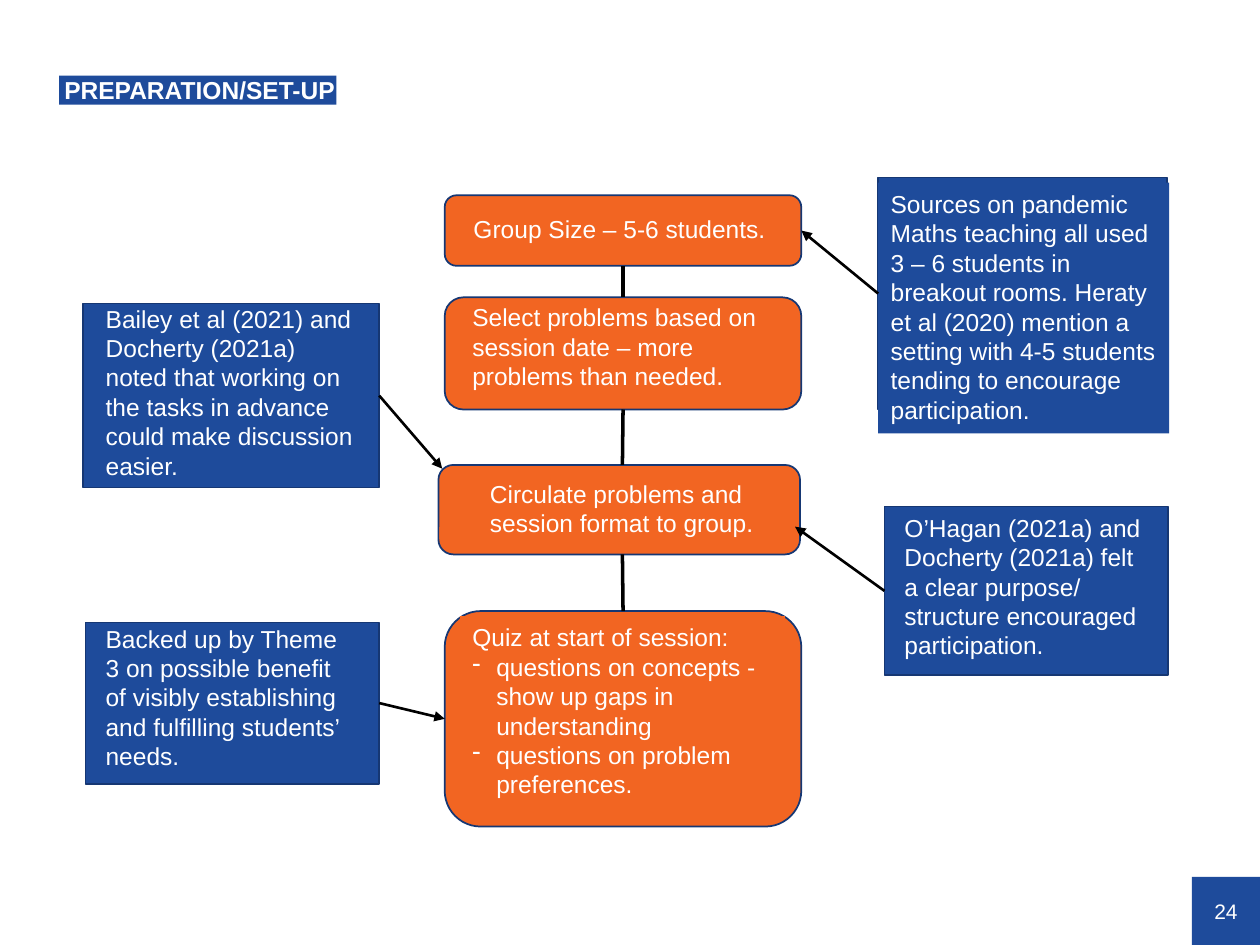
from lxml import etree
from pptx import Presentation, util as u
from pptx.dml.color import RGBColor
from pptx.enum import shapes, text
from pptx.oxml.ns import qn

FONT = "Arial"
BLUE, ORANGE, NAVY, WHITE, BLACK = "1E4B9B", "F26522", "163773", "FFFFFF", "000000"
RECT, ROUND = shapes.MSO_SHAPE.RECTANGLE, shapes.MSO_SHAPE.ROUNDED_RECTANGLE
TOP, LEFT, BOTTOM, RIGHT = range(4)
SPINE = 4.94  # x of the vertical line through the steps

# Content: frame, text frame, text fill, paragraphs; "- " starts a bullet
STEPS = [
    ((3.53, 1.55, 2.83, 0.56), (3.66, 1.65, 2.57, 0.34), None,
     ["Group Size – 5-6 students."]),
    ((3.53, 2.36, 2.83, 0.89), (3.65, 2.35, 2.58, 0.81), None,
     ["Select problems based on session date – more problems than needed."]),
    ((3.48, 3.69, 2.87, 0.71), (3.79, 3.75, 2.36, 0.57), None,
     ["Circulate problems and session format to group."]),
    ((3.53, 4.85, 2.83, 1.71), (3.65, 4.89, 2.58, 1.51), ORANGE,
     ["Quiz at start of session:",
      "- questions on concepts - show up gaps in understanding",
      "- questions on problem preferences."]),
]
NOTES = [
    ((6.97, 1.41, 2.29, 1.84), (6.97, 1.45, 2.31, 1.99), BLUE,
     ["Sources on pandemic Maths teaching all used 3 – 6 students in breakout rooms. "
      "Heraty et al (2020) mention a setting with 4-5 students tending to encourage "
      "participation."]),
    ((0.66, 2.41, 2.35, 1.46), (0.74, 2.36, 2.22, 1.51), None,
     ["Bailey et al (2021) and Docherty (2021a) noted that working on the tasks in "
      "advance could make discussion easier."]),
    ((7.02, 4.02, 2.25, 1.34), (7.08, 4.02, 2.1, 1.28), None,
     ["O’Hagan (2021a) and Docherty (2021a) felt a clear purpose/",
      "structure encouraged participation."]),
    ((0.68, 4.94, 2.33, 1.28), (0.74, 4.9, 2.17, 1.28), None,
     ["Backed up by Theme 3 on possible benefit of visibly establishing and "
      "fulfilling students’ needs."]),
]


def inches(values):
    return [u.Inches(value) for value in values]


def paint(fill, color):
    fill.solid()
    fill.fore_color.rgb = RGBColor.from_string(color)


def style(para, size=14, bold=False):
    para.font.name, para.font.size, para.font.bold = FONT, u.Pt(size), bold
    para.font.color.rgb = RGBColor.from_string(WHITE)


def add_box(kind, frame, fill, outline=None):
    box = slide.shapes.add_shape(kind, *inches(frame))
    box.shadow.inherit = False
    paint(box.fill, fill)
    if outline:
        paint(box.line.fill, outline)
        box.line.width = u.Pt(1)
    else:
        box.line.fill.background()
    return box


def add_text(frame, fill, lines):
    box = slide.shapes.add_textbox(*inches(frame))
    if fill:
        paint(box.fill, fill)
    box.text_frame.word_wrap = True
    for index, line in enumerate(lines):
        para = box.text_frame.paragraphs[0] if index == 0 else box.text_frame.add_paragraph()
        para.text = line.removeprefix("- ")
        if line.startswith("- "):
            props = para._p.get_or_add_pPr()
            props.set("marL", str(u.Inches(0.19)))
            props.set("indent", str(-u.Inches(0.19)))
            etree.SubElement(props, qn("a:buChar")).set("char", "-")
        style(para)


def add_card(kind, color, card):
    frame, text_frame, fill, lines = card
    box = add_box(kind, frame, color, NAVY)
    add_text(text_frame, fill, lines)
    return box


def add_link(start, end, arrow=False):
    """Each end is a point (x, y) or a pair (shape, side)."""
    points = [(0, 0) if hasattr(spot[0], "shape_id") else spot for spot in (start, end)]
    link = slide.shapes.add_connector(
        shapes.MSO_CONNECTOR.STRAIGHT, *inches(points[0] + points[1]))
    for spot, connect in ((start, link.begin_connect), (end, link.end_connect)):
        if hasattr(spot[0], "shape_id"):
            connect(*spot)
    paint(link.line.fill, BLACK)
    link.line.width = u.Pt(1.5 if arrow else 2)
    if arrow:
        etree.SubElement(link.line._get_or_add_ln(), qn("a:tailEnd")).set("type", "triangle")
    etree.SubElement(link._element.spPr, qn("a:effectLst"))


deck = Presentation()
deck.slide_width, deck.slide_height = inches((10, 7.5))
slide = deck.slides.add_slide(deck.slide_layouts[5])

# Title
title = slide.shapes.title
title.left, title.top, title.width, title.height = inches((0.47, 0.6, 2.2, 0.23))
paint(title.fill, BLUE)
frame = title.text_frame
frame.text = "PREPARATION/SET-UP"
frame.margin_left, frame.margin_top, frame.margin_right, frame.margin_bottom = inches(
    (0.04, 0.02, 0, 0))
frame.vertical_anchor = text.MSO_ANCHOR.MIDDLE
frame.auto_size = text.MSO_AUTO_SIZE.NONE
heading = frame.paragraphs[0]
heading.alignment, heading.line_spacing = text.PP_ALIGN.LEFT, 0.9
style(heading, bold=True)

# Page number
number = add_box(RECT, (9.46, 6.96, 0.54, 0.54), BLUE)
number.text_frame.text = "24"
number.text_frame.margin_left = number.text_frame.margin_right = 0
number.text_frame.paragraphs[0].alignment = text.PP_ALIGN.CENTER
style(number.text_frame.paragraphs[0], 12)

# Steps and the notes beside them
group, select, circulate, quiz = [add_card(ROUND, ORANGE, step) for step in STEPS]
sources, advance, purpose, needs = [add_card(RECT, BLUE, note) for note in NOTES]

# Arrows from notes to steps
add_link((sources, LEFT), (group, RIGHT), arrow=True)
add_link((advance, RIGHT), (3.51, 3.72), arrow=True)
add_link((purpose, LEFT), (6.31, 4.18), arrow=True)
add_link((needs, RIGHT), (quiz, LEFT), arrow=True)

# Lines between steps; the third step is off centre, so its ends stay on the spine
add_link((group, BOTTOM), (select, TOP))
add_link((select, BOTTOM), (SPINE, 3.69))
add_link((SPINE, 4.4), (quiz, TOP))

deck.save("out.pptx")
